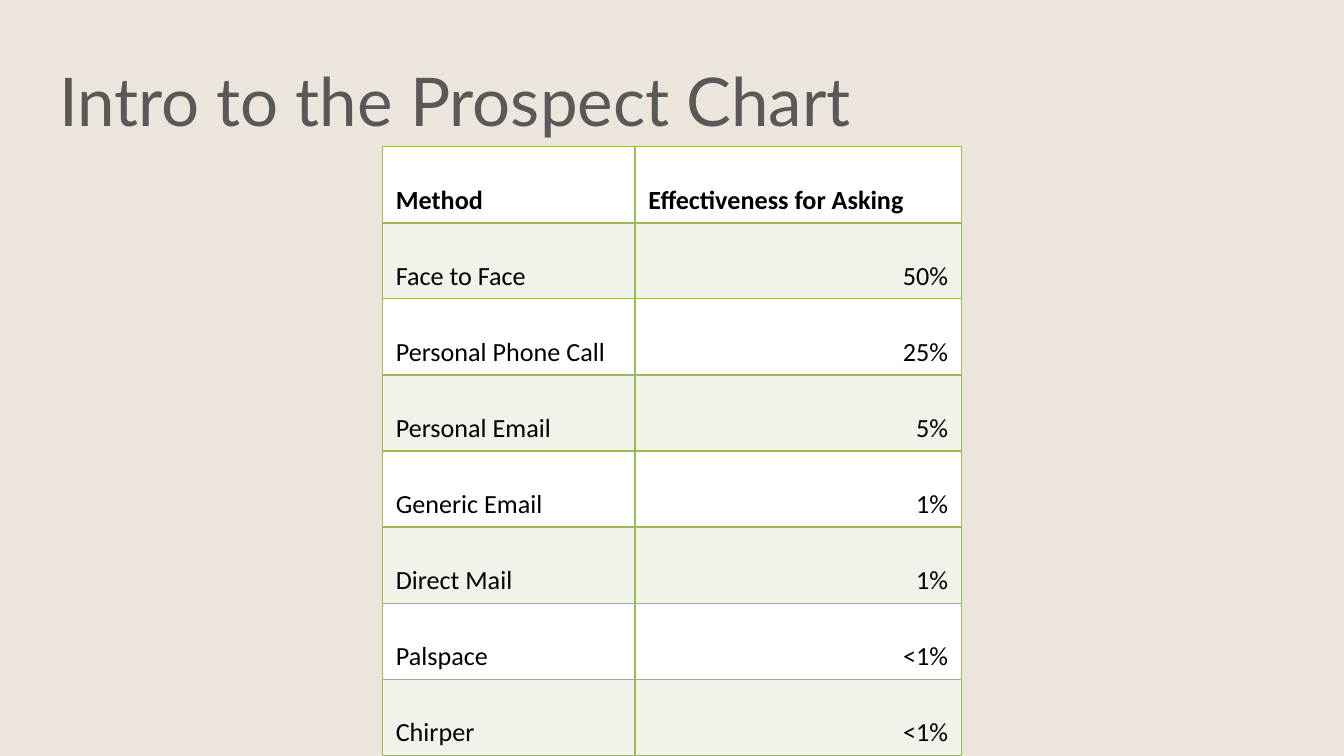
"""Build the prospect chart slide: a title above a table of asking methods."""
from lxml import etree
from pptx import Presentation
from pptx.dml.color import RGBColor
from pptx.enum.text import MSO_ANCHOR, PP_ALIGN
from pptx.oxml.ns import qn
from pptx.util import Inches, Pt

TOP = MSO_ANCHOR.TOP
LEFT, RIGHT = PP_ALIGN.LEFT, PP_ALIGN.RIGHT

THEME = {
    "background": "EBE5DB", "title": "595959", "text": "000000",
    "plain": "FFFFFF", "band": "EFF3EA", "border": "9BBB59",
    "title_font": "Lato", "body_font": "Calibri",
    "title_size": 36, "body_size": 14, "line": 0.75, "header_line": 1.5,
}
ROWS = [
    ("Method", "Effectiveness for Asking"),
    ("Face to Face", "50%"),
    ("Personal Phone Call", "25%"),
    ("Personal Email", "5%"),
    ("Generic Email", "1%"),
    ("Direct Mail", "1%"),
    ("Palspace", "<1%"),
    ("Chirper", "<1%"),
]


def write(tf, text, font, size, color, bold=False, align=LEFT, spacing=1.0):
    p = tf.paragraphs[0]
    p.alignment, p.line_spacing = align, spacing
    r = p.add_run()
    r.text = text
    r.font.name, r.font.size, r.font.bold = font, Pt(size), bold
    r.font.color.rgb = RGBColor.from_string(color)


def add_border(cell, side, width):
    tc_pr = cell._tc.get_or_add_tcPr()
    ln = etree.SubElement(tc_pr, qn(f"a:ln{side}"), w=str(Pt(width)))
    fill = etree.SubElement(ln, qn("a:solidFill"))
    etree.SubElement(fill, qn("a:srgbClr"), val=THEME["border"])


prs = Presentation()
prs.slide_width = Inches(10)
prs.slide_height = prs.slide_width * 9 // 16
col, row = prs.slide_width / 100, prs.slide_height / 100

s = prs.slides.add_slide(prs.slide_layouts[6])
s.background.fill.solid()
s.background.fill.fore_color.rgb = RGBColor.from_string(THEME["background"])

title = s.shapes.add_textbox(int(3.41 * col), int(6.1 * row), int(93.2 * col), int(11.2 * row))
tf = title.text_frame
tf.word_wrap, tf.vertical_anchor = True, TOP
tf.margin_left = tf.margin_right = tf.margin_top = tf.margin_bottom = Inches(0.1)
write(tf, "Intro to the Prospect Chart", THEME["title_font"], THEME["title_size"], THEME["title"])

row_height = int(10.07 * row)
frame = s.shapes.add_table(len(ROWS), 2, int(28.45 * col), int(19.4 * row),
                           int(43.1 * col), row_height * len(ROWS))
table = frame.table
for column, share in zip(table.columns, (18.8, 24.3)):
    column.width = int(share * col)

for i, values in enumerate(ROWS):
    table.rows[i].height = row_height
    header = i == 0
    for j, value in enumerate(values):
        cell = table.cell(i, j)
        cell.margin_left = cell.margin_right = Inches(0.1)
        cell.margin_top = cell.margin_bottom = Inches(0.05)
        cell.vertical_anchor = TOP
        write(cell.text_frame, value, THEME["body_font"], THEME["body_size"], THEME["text"],
              bold=header, align=RIGHT if j and not header else LEFT, spacing=1.98)
        for side in "LRTB":
            thick = (i, side) in ((0, "B"), (1, "T"))
            add_border(cell, side, THEME["header_line" if thick else "line"])
        cell.fill.solid()
        cell.fill.fore_color.rgb = RGBColor.from_string(THEME["band" if i % 2 else "plain"])

prs.save("out.pptx")
